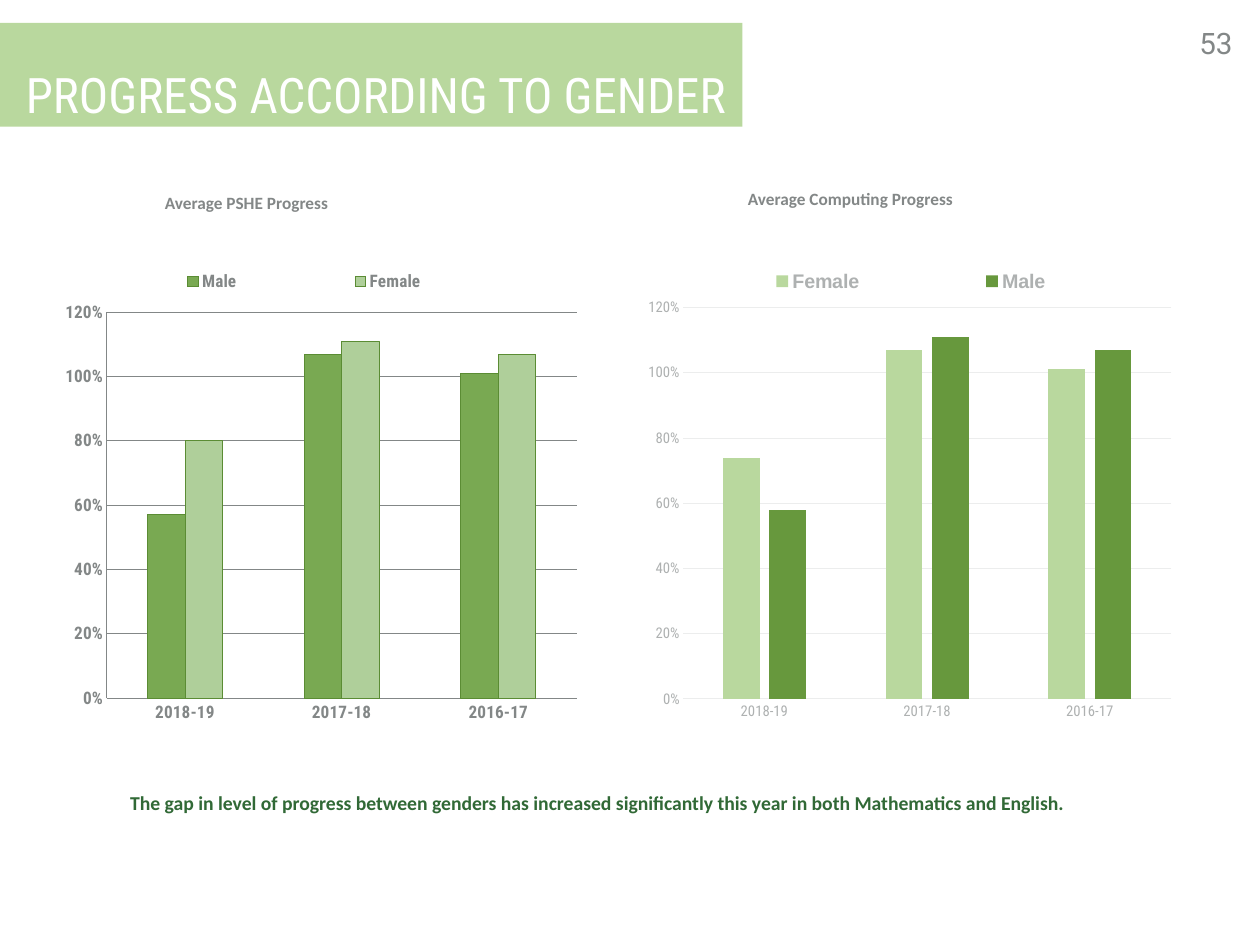
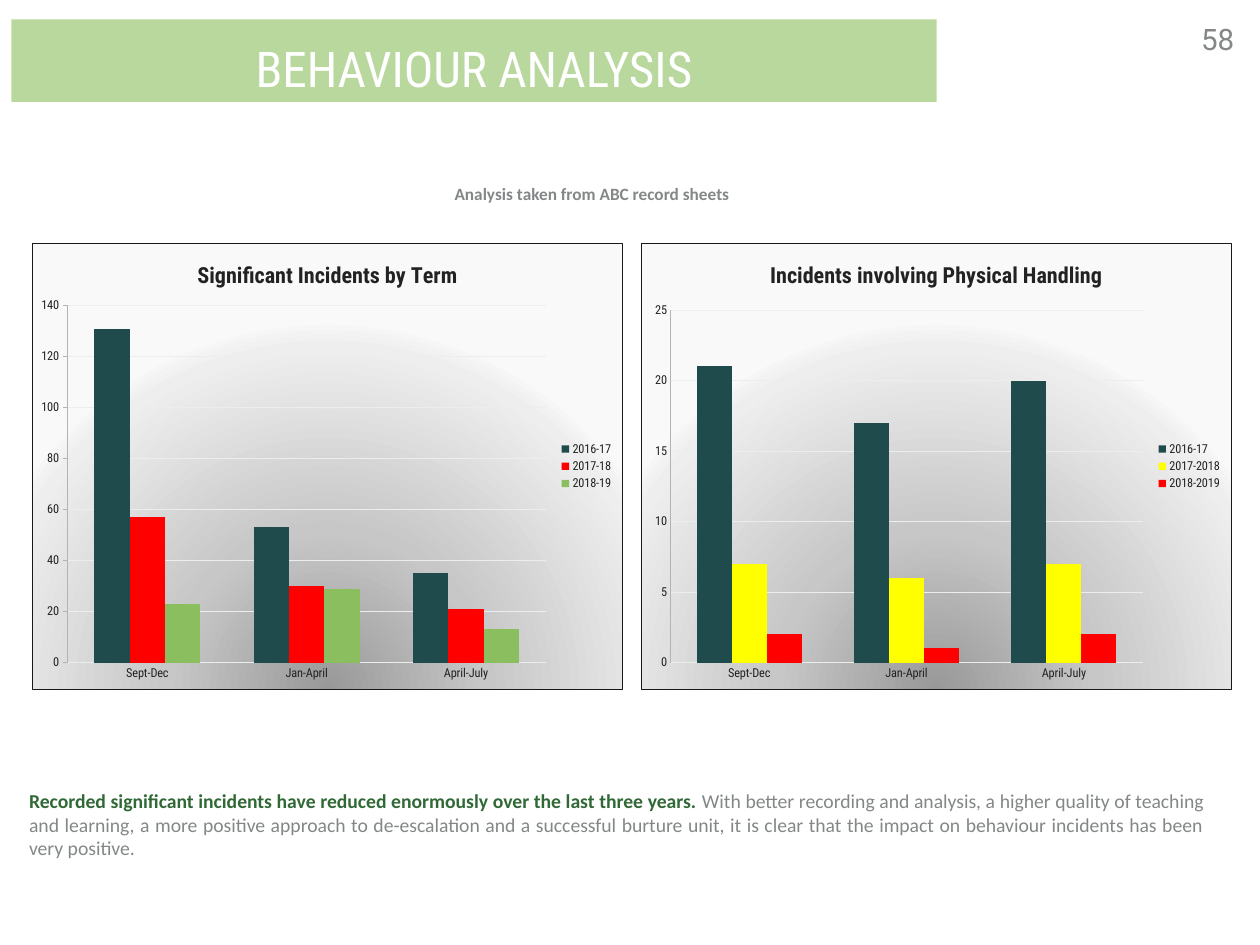
"""Build two school report slides on progress by gender and on behaviour."""
import pptx
import pptx.chart.data
import pptx.dml.color
import pptx.enum.chart
import pptx.enum.shapes
import pptx.enum.text
import pptx.oxml
import pptx.oxml.ns
import pptx.util

Inches = pptx.util.Inches
Pt = pptx.util.Pt
ALIGN = pptx.enum.text.PP_ALIGN
ANCHOR = pptx.enum.text.MSO_ANCHOR
LEGEND = pptx.enum.chart.XL_LEGEND_POSITION
TICK = pptx.enum.chart.XL_TICK_MARK
CONDENSED = "Roboto Condensed"
BAND, GREY, GREEN = "B9D89E", "838787", "316936"
PALE, LIGHT, INK, TEAL, RED = "ECEDED", "AEB1B1", "222222", "204B4D", "FF0000"
STOPS = [(0, "999999"), (43, "C7C7C7"), (93, "EEEEEE"), (100, "F9F9F9")]


def rgb(value):
    return pptx.dml.color.RGBColor.from_string(value)


def set_text(tf, runs, size, font, align, anchor=ANCHOR.TOP, wrap=True, inset=0.06, spacing=None):
    tf.word_wrap = wrap
    tf.vertical_anchor = anchor
    tf.margin_left = tf.margin_right = Inches(inset)
    tf.margin_top = tf.margin_bottom = Inches(0.06)
    p = tf.paragraphs[0]
    p.alignment = align
    if spacing:
        p.line_spacing = spacing
    p.font.size = Pt(size)
    p.font.name = font
    for text, color, bold in runs:
        r = p.add_run()
        r.text = text
        r.font.color.rgb = rgb(color)
        r.font.bold = bold


terms = ["Sept-Dec", "Jan-April", "April-July"]
years = ["2018-19", "2017-18", "2016-17"]
progress = dict(cats=years, fmt="0%", top=1.2, step=0.2, gap=219, legend=LEGEND.TOP)
incidents = dict(cats=terms, fmt="General", top=140, step=20, gap=150, legend=LEGEND.RIGHT,
                 bold=False, axis_size=10, axis_color=INK,
                 legend_font=(10, CONDENSED), grid=PALE, axis_line="B3B3B3", base_line=PALE,
                 overlap=0, outline=None, legend_box=None)

slides = [
    dict(
        band=(-0.03, 0.26, 8.41, 1.17), title="PROGRESS ACCORDING TO GENDER", spacing=0.7,
        title_size=39.8, title_inset=0.2, number="53", number_box=(12.97, 0.3, 1, 0.5),
        headings=[("Average PSHE Progress", 1.8, 2.11, 2.38),
                  ("Average Computing Progress", 8.38, 2.07, 2.88)],
        note=(1.37, 8.87, 11.71, 0.37),
        note_runs=[("The gap in level of progress between genders has increased significantly "
                    "this year in both Mathematics and English.", GREEN, True)],
        charts=[
            dict(progress, box=(0.6, 2.88, 6.03, 5.38), bold=True, axis_size=14, axis_color=GREY,
                 legend_font=(14, CONDENSED), grid=GREY, axis_line=GREY, base_line=GREY,
                 overlap=0, outline="5B8C34", plot_box=(0.1, 0.12, 0.88, 0.81),
                 legend_box=(0.04, 0.03, 0.86, 0.05),
                 series=[("Male", (0.57, 1.07, 1.01), "79A952"),
                         ("Female", (0.8, 1.11, 1.07), "AFCF9A")]),
            dict(progress, box=(7.22, 2.88, 6.12, 5.39), bold=False, axis_size=12,
                 axis_color=LIGHT, legend_font=(16, "Arial"), grid=PALE, axis_line=None,
                 base_line=PALE, overlap=-27, outline=None, plot_box=(0.08, 0.11, 0.9, 0.82),
                 legend_box=(0.03, 0.03, 0.94, 0.05),
                 series=[("Female", (0.74, 1.07, 1.01), BAND),
                         ("Male", (0.58, 1.11, 1.07), "67983D")]),
        ]),
    dict(
        band=(0.13, 0.22, 10.44, 0.93), title="BEHAVIOUR ANALYSIS", spacing=0.8,
        title_size=40, title_inset=0.06, number="58", number_box=(12.99, 0.26, 1, 0.44),
        headings=[("Analysis taken from ABC record sheets", 5.07, 2.01, 3.79)],
        note=(0.23, 8.85, 13.46, 0.91),
        note_runs=[("Recorded significant incidents have reduced enormously over the last "
                    "three years.", GREEN, True),
                   (" With better recording and analysis, a higher quality of teaching and "
                    "learning, a more positive approach to de-escalation and a successful "
                    "burture unit, it is clear that the impact on behaviour incidents has been "
                    "very positive.", GREY, False)],
        charts=[
            dict(incidents, box=(0.36, 2.74, 6.67, 5.05), title="Significant Incidents by Term",
                 tick=TICK.OUTSIDE, plot_box=(0.06, 0.14, 0.81, 0.8),
                 series=[("2016-17", (131, 53, 35), TEAL), ("2017-18", (57, 30, 21), RED),
                         ("2018-19", (23, 29, 13), "8ABE5E")]),
            dict(incidents, box=(7.23, 2.74, 6.67, 5.05), top=25, step=5,
                 title="Incidents involving Physical Handling",
                 plot_box=(0.05, 0.15, 0.8, 0.79),
                 series=[("2016-17", (21, 17, 20), TEAL), ("2017-2018", (7, 6, 7), "FFFF00"),
                         ("2018-2019", (2, 1, 2), RED)]),
        ]),
]

prs = pptx.Presentation()
prs.slide_width = Inches(14.22)
prs.slide_height = Inches(10.67)
ns = pptx.oxml.ns.nsdecls("c", "a")

for page in slides:
    s = prs.slides.add_slide(prs.slide_layouts[6])

    sp = s.shapes.add_shape(pptx.enum.shapes.MSO_SHAPE.RECTANGLE, *map(Inches, page["band"]))
    sp.shadow.inherit = False
    sp.fill.solid()
    sp.fill.fore_color.rgb = rgb(BAND)
    sp.line.fill.background()
    set_text(sp.text_frame, [(page["title"], "FFFFFF", False)], page["title_size"], CONDENSED,
             ALIGN.CENTER, ANCHOR.BOTTOM, spacing=page["spacing"])
    sp.text_frame.margin_left = Inches(page["title_inset"])

    sp = s.shapes.add_textbox(*map(Inches, page["number_box"]))
    set_text(sp.text_frame, [(page["number"], GREY, False)], 24, "Roboto", ALIGN.RIGHT,
             spacing=0.8)

    for text, left, top, width in page["headings"]:
        sp = s.shapes.add_textbox(Inches(left), Inches(top), Inches(width), Inches(0.35))
        set_text(sp.text_frame, [(text, GREY, True)], 14, "Calibri", ALIGN.LEFT,
                 ANCHOR.MIDDLE, wrap=False)

    sp = s.shapes.add_textbox(*map(Inches, page["note"]))
    set_text(sp.text_frame, page["note_runs"], 16, "Calibri", ALIGN.JUSTIFY, inset=0.1)

    for c in page["charts"]:
        data = pptx.chart.data.CategoryChartData(number_format=c["fmt"])
        data.categories = c["cats"]
        for name, values, color in c["series"]:
            data.add_series(name, values)
        chart = s.shapes.add_chart(pptx.enum.chart.XL_CHART_TYPE.COLUMN_CLUSTERED,
                                   *map(Inches, c["box"]), data).chart
        chart.font.name = CONDENSED
        chart.font.size = Pt(c["axis_size"])
        chart.font.bold = c["bold"]
        chart.font.color.rgb = rgb(c["axis_color"])

        chart.has_title = "title" in c
        if chart.has_title:
            chart.chart_title.include_in_layout = False
            tf = chart.chart_title.text_frame
            tf.text = c["title"]
            font = tf.paragraphs[0].font
            font.name, font.size, font.bold = CONDENSED, Pt(18), True
            font.color.rgb = rgb(INK)

        chart.has_legend = True
        legend = chart.legend
        legend.position = c["legend"]
        legend.include_in_layout = False
        legend.font.size = Pt(c["legend_font"][0])
        legend.font.name = c["legend_font"][1]
        legend.font.bold = c["legend"] == LEGEND.TOP
        legend.font.color.rgb = rgb(c["axis_color"])

        plot = chart.plots[0]
        plot.vary_by_categories = False
        plot.gap_width = c["gap"]
        plot.overlap = c["overlap"]
        for ser, (name, values, color) in zip(plot.series, c["series"]):
            ser.format.fill.solid()
            ser.format.fill.fore_color.rgb = rgb(color)
            if c["outline"]:
                ser.format.line.color.rgb = rgb(c["outline"])
                ser.format.line.width = Pt(0.75)

        val, cat = chart.value_axis, chart.category_axis
        val.minimum_scale, val.maximum_scale, val.major_unit = 0, c["top"], c["step"]
        val.tick_labels.number_format = c["fmt"]
        val.tick_labels.number_format_is_linked = False
        val.major_tick_mark = c.get("tick", TICK.NONE)
        cat.major_tick_mark = TICK.NONE
        val.has_major_gridlines = True
        for line, color in ((val.major_gridlines.format.line, c["grid"]),
                            (val.format.line, c["axis_line"]),
                            (cat.format.line, c["base_line"])):
            if color:
                line.color.rgb = rgb(color)
                line.width = Pt(0.75)
            else:
                line.fill.background()

        root = chart.element
        for tag, index, box in (("plotArea", 0, c["plot_box"]), ("legend", 1, c["legend_box"])):
            if not box:
                continue
            parent = root.xpath(f"c:chart/c:{tag}")[0]
            for old in parent.xpath("c:layout"):
                parent.remove(old)
            target = '<c:layoutTarget val="inner"/>' if tag == "plotArea" else ""
            modes = '<c:xMode val="edge"/><c:yMode val="edge"/>'
            sizes = "".join(f'<c:{key} val="{value}"/>' for key, value in zip("xywh", box))
            parent.insert(index, pptx.oxml.parse_xml(
                f"<c:layout {ns}><c:manualLayout>{target}{modes}{sizes}"
                "</c:manualLayout></c:layout>"))

        if chart.has_title:
            stops = "".join(f'<a:gs pos="{pos * 1000}"><a:srgbClr val="{color}"/></a:gs>'
                            for pos, color in STOPS)
            frame = (f'<a:gradFill><a:gsLst>{stops}</a:gsLst><a:path path="circle">'
                     '<a:fillToRect l="50000" t="130000" r="50000" b="-30000"/></a:path>'
                     '</a:gradFill><a:ln w="9525"><a:solidFill><a:srgbClr val="191919"/>'
                     '</a:solidFill></a:ln>')
        else:
            frame = "<a:noFill/><a:ln><a:noFill/></a:ln>"
        root.xpath("c:chart")[0].addnext(pptx.oxml.parse_xml(f"<c:spPr {ns}>{frame}</c:spPr>"))

prs.save("out.pptx")
